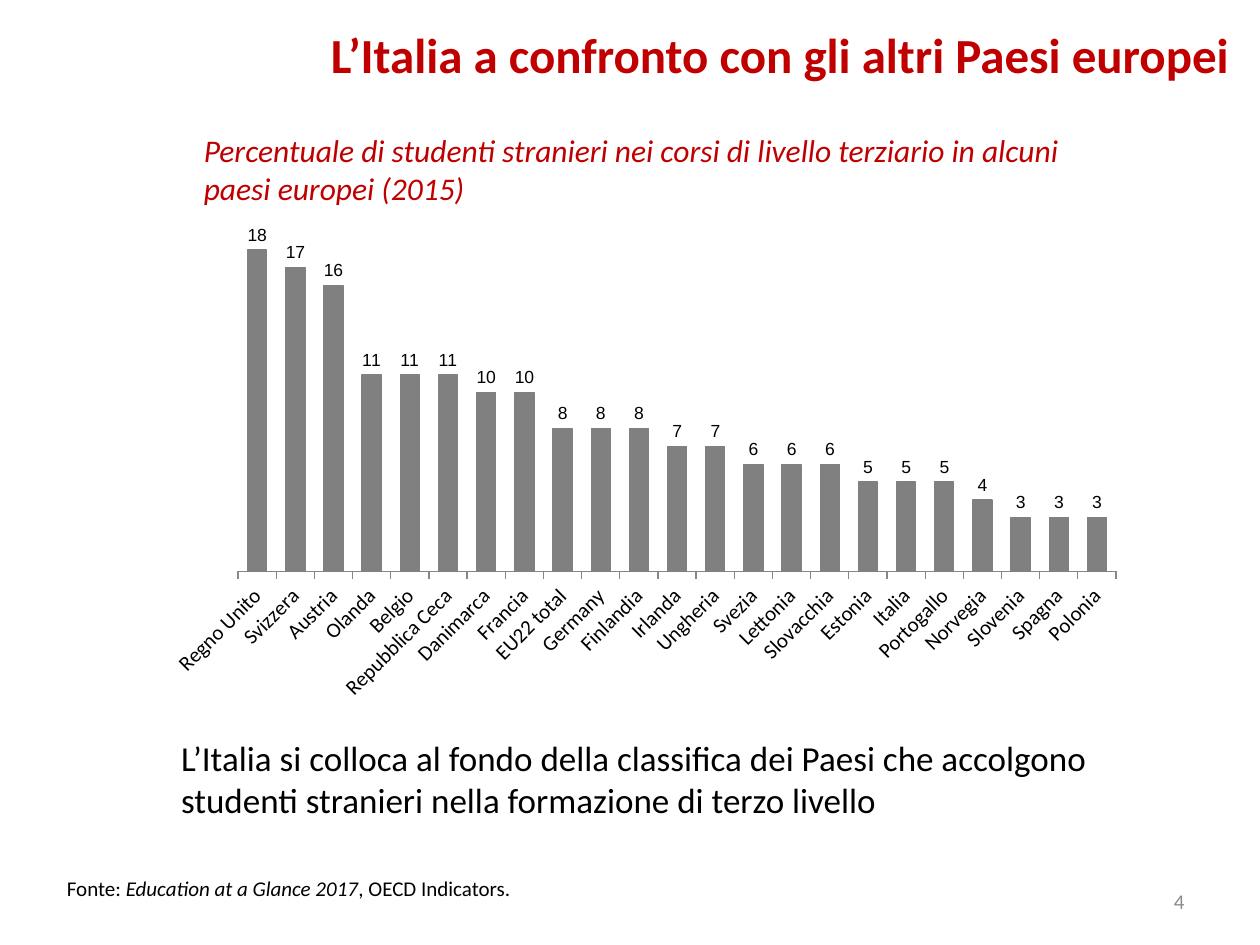
from lxml import etree
from pptx import Presentation, util as u
from pptx.chart.data import CategoryChartData
from pptx.dml.color import RGBColor
from pptx.enum import chart as ch, text
from pptx.oxml.ns import qn

COLORS = {"red": "C00000", "black": "000000", "bar": "808080", "spare": "C0504D",
          "axis": "878787", "number": "8B8B8B", "white": "FFFFFF"}

TOP, MIDDLE = text.MSO_ANCHOR.TOP, text.MSO_ANCHOR.MIDDLE
LEFT, RIGHT = text.PP_ALIGN.LEFT, text.PP_ALIGN.RIGHT

passages = [
    {"box": (3.86, 2.52, 18.59, 1.78), "anchor": TOP, "align": LEFT,
     "size": 18, "color": "red",
     "runs": [("Percentuale di studenti stranieri nei corsi di livello terziario "
               "in alcuni paesi europei (2015)", {"italic": True})]},
    {"box": (3.4, 14.73, 19.51, 1.96), "anchor": TOP, "align": LEFT,
     "size": 20, "color": "black",
     "runs": [("L’Italia si colloca al fondo della classifica dei Paesi che accolgono "
               "studenti stranieri nella formazione di terzo livello", {})]},
    {"box": (18.21, 17.65, 5.92, 1.02), "anchor": MIDDLE, "align": RIGHT,
     "size": 12, "color": "number", "runs": [("4", {})]},
    {"box": (1.1, 17.53, 15.6, 0.76), "anchor": TOP, "align": LEFT,
     "size": 12, "color": "black",
     "runs": [("Fonte: ", {}), ("Education at a Glance 2017", {"italic": True}),
              (", OECD Indicators.", {})]},
    {"box": (2.16, 0.46, 22.86, 1.27), "anchor": MIDDLE, "align": RIGHT,
     "size": 28, "color": "red",
     "runs": [("L’Italia a confronto con gli altri Paesi europei", {"bold": True})]},
]

foreign_students = {
    "Regno Unito": 18, "Svizzera": 17, "Austria": 16, "Olanda": 11, "Belgio": 11,
    "Repubblica Ceca": 11, "Danimarca": 10, "Francia": 10, "EU22 total": 8,
    "Germany": 8, "Finlandia": 8, "Irlanda": 7, "Ungheria": 7, "Svezia": 6,
    "Lettonia": 6, "Slovacchia": 6, "Estonia": 5, "Italia": 5, "Portogallo": 5,
    "Norvegia": 4, "Slovenia": 3, "Spagna": 3, "Polonia": 3,
}
chart_box = (3.1, 4.32, 19.81, 10.01)
plot_left, plot_width, plot_height = 1.7, 17.7, 7.2
plot_layout = {"layoutTarget": "inner", "xMode": "edge", "yMode": "edge",
               "x": plot_left / chart_box[2], "y": 0,
               "w": plot_width / chart_box[2], "h": plot_height / chart_box[3]}


def rgb(name):
    return RGBColor.from_string(COLORS[name])


def apply(target, values):
    for key, value in values.items():
        setattr(target, key, value)


def style_font(font, size, color, **more):
    apply(font, {"name": "Calibri", "size": u.Pt(size), **more})
    font.color.rgb = rgb(color)


def add_passage(slide, passage):
    frame = slide.shapes.add_textbox(*map(u.Cm, passage["box"])).text_frame
    apply(frame, {"word_wrap": True, "vertical_anchor": passage["anchor"]})
    paragraph = frame.paragraphs[0]
    paragraph.alignment = passage["align"]
    for words, emphasis in passage["runs"]:
        run = paragraph.add_run()
        run.text = words
        style_font(run.font, passage["size"], passage["color"], **emphasis)


def add_ranking(slide):
    data = CategoryChartData(number_format="#,##0")
    data.categories = list(foreign_students)
    data.add_series("Series 1", list(foreign_students.values()))
    data.add_series("Series 2", [])
    ranking = slide.shapes.add_chart(
        ch.XL_CHART_TYPE.COLUMN_CLUSTERED, *map(u.Cm, chart_box), data).chart
    apply(ranking, {"has_legend": False, "has_title": False})
    style_font(ranking.font, 10, "black", name="Arial")

    apply(ranking.value_axis, {"visible": False, "has_major_gridlines": False,
                               "minimum_scale": 0, "maximum_scale": 20})
    countries = ranking.category_axis
    apply(countries, {"major_tick_mark": ch.XL_TICK_MARK.OUTSIDE,
                      "has_major_gridlines": False})
    style_font(countries.tick_labels.font, 12, "black")
    countries.format.line.color.rgb = rgb("axis")
    countries.format.line.width = u.Pt(0.75)
    countries._element.txPr.find(qn("a:bodyPr")).set("rot", "-2700000")

    columns = ranking.plots[0]
    apply(columns, {"gap_width": 100, "overlap": 50, "vary_by_categories": False})
    shares, spare = columns.series
    for series, color in ((shares, "bar"), (spare, "spare")):
        series.format.fill.solid()
        series.format.fill.fore_color.rgb = rgb(color)
    shares.format.line.color.rgb = rgb("bar")
    shares.format.line.width = u.Pt(0.75)
    apply(shares.data_labels, {"show_value": True, "number_format": "#,##0",
                               "number_format_is_linked": False,
                               "position": ch.XL_LABEL_POSITION.OUTSIDE_END})
    for tag in ("c:cat", "c:val"):
        for unused in spare._element.findall(qn(tag)):
            spare._element.remove(unused)

    plot_area = ranking._chartSpace.chart.plotArea
    for old in plot_area.findall(qn("c:layout")):
        plot_area.remove(old)
    layout = etree.Element(qn("c:layout"))
    manual = etree.SubElement(layout, qn("c:manualLayout"))
    for key, value in plot_layout.items():
        etree.SubElement(manual, qn(f"c:{key}")).set("val", str(value))
    plot_area.insert(0, layout)
    backdrop = etree.SubElement(plot_area, qn("c:spPr"))
    fill = etree.SubElement(backdrop, qn("a:solidFill"))
    etree.SubElement(fill, qn("a:srgbClr")).set("val", COLORS["white"])


def main():
    deck = Presentation()
    apply(deck, {"slide_width": u.Cm(25.4), "slide_height": u.Cm(19.05)})
    slide = deck.slides.add_slide(deck.slide_layouts[6])
    for passage in passages:
        add_passage(slide, passage)
    add_ranking(slide)
    deck.save("out.pptx")


if __name__ == "__main__":
    main()
